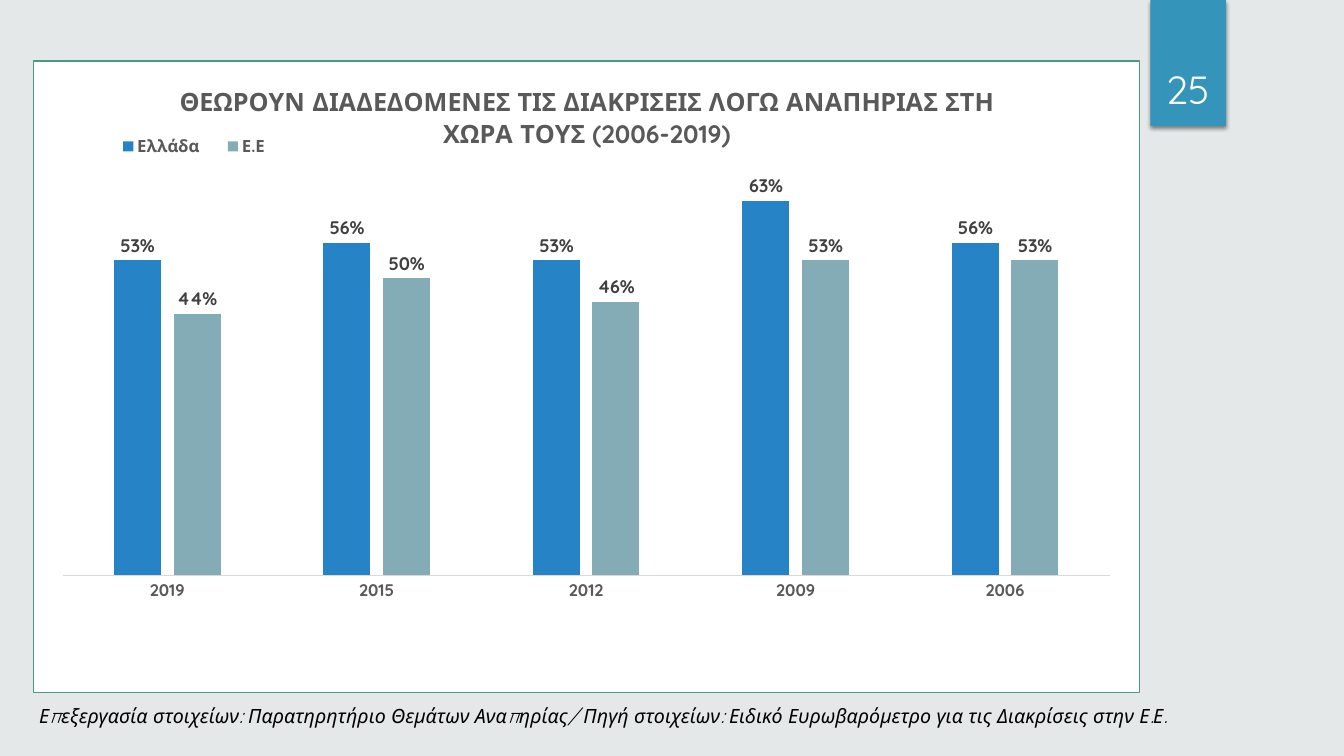
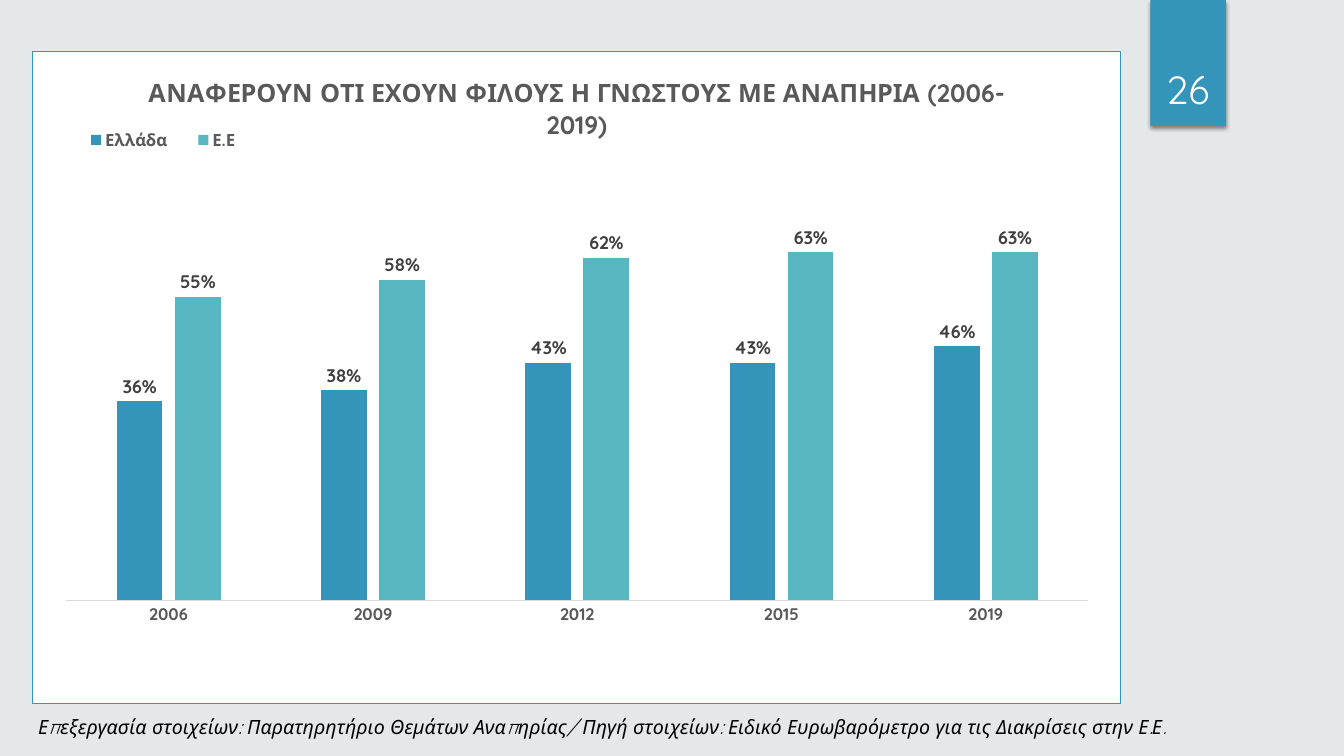
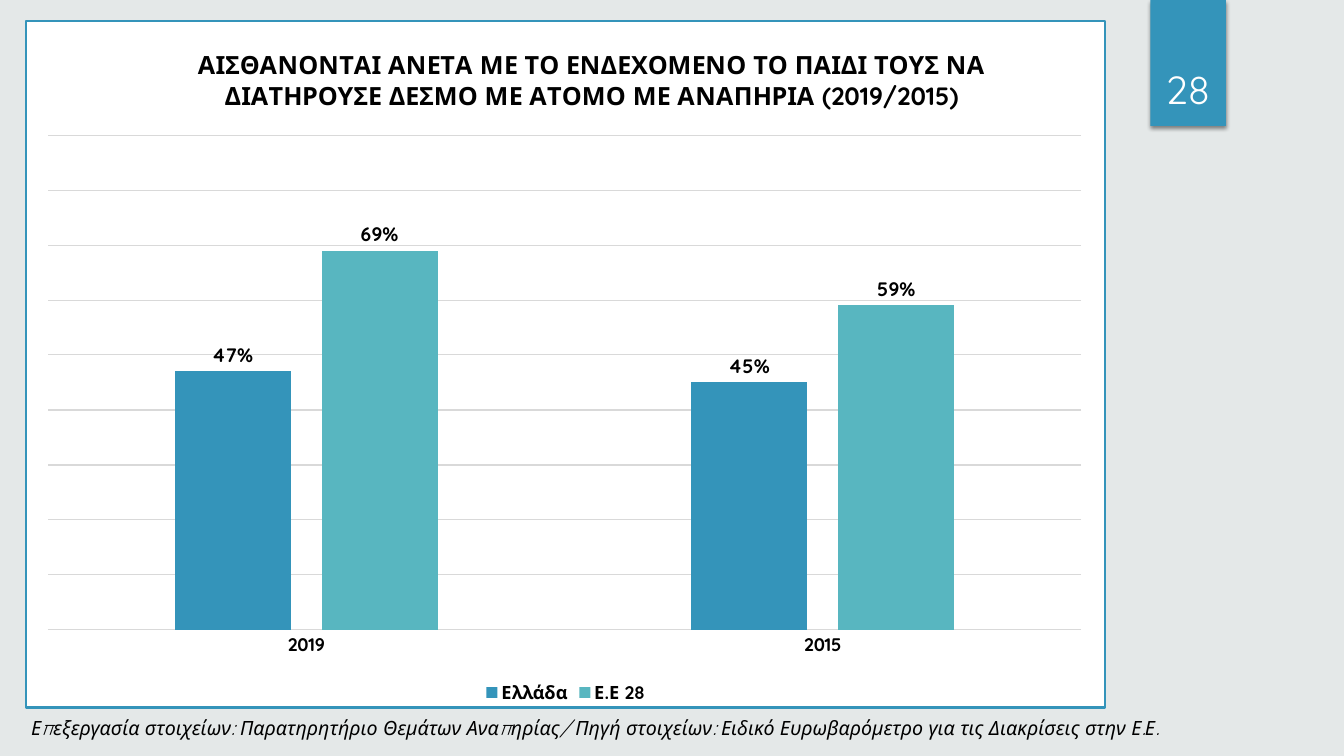
"""Build three slides of bar charts about attitudes to disability."""
from lxml import etree
from pptx import Presentation
from pptx.chart import data as cd
from pptx.dml.color import RGBColor
from pptx.enum import chart as ce, shapes, text
from pptx.oxml import ns, parse_xml
from pptx.util import Inches, Pt

PALE = RGBColor(0xE4, 0xE8, 0xE8)
WHITE = RGBColor(0xFF, 0xFF, 0xFF)
BLACK = RGBColor(0, 0, 0)
GREY = RGBColor(0x59, 0x59, 0x59)
DARK = RGBColor(0x40, 0x40, 0x40)
RULE = RGBColor(0xD9, 0xD9, 0xD9)
BLUE = RGBColor(0x34, 0x94, 0xBA)
TEAL = RGBColor(0x58, 0xB6, 0xC0)
ROYAL = RGBColor(0x26, 0x83, 0xC6)
SLATE = RGBColor(0x84, 0xAC, 0xB6)
GREEN = RGBColor(0x4A, 0x9B, 0x83)
FACE = "Quicksand"
SOURCE = ("Επεξεργασία στοιχείων: Παρατηρητήριο Θεμάτων Αναπηρίας/ "
          "Πηγή στοιχείων: Ειδικό Ευρωβαρόμετρο για τις Διακρίσεις στην Ε.Ε.")

SMALL = dict(text=GREY, label=DARK, size=12, mark=13, line=0.75, top=0.8, grid=False, head=None)
LARGE = dict(text=BLACK, label=BLACK, size=13, mark=14, line=1.5, top=0.9, grid=True,
             head=(0.155, 0.03))

SLIDES = [
    dict(SMALL, page=25, box=(0.33, 0.6, 10.98, 6.28), note=(0.29, 6.93),
         title="ΘΕΩΡΟΥΝ ΔΙΑΔΕΔΟΜΕΝΕΣ ΤΙΣ ΔΙΑΚΡΙΣΕΙΣ ΛΟΓΩ ΑΝΑΠΗΡΙΑΣ ΣΤΗ ΧΩΡΑ ΤΟΥΣ (2006-2019)",
         years=["2019", "2015", "2012", "2009", "2006"],
         bars=[("Ελλάδα", (0.53, 0.56, 0.53, 0.63, 0.56), ROYAL),
               ("Ε.Ε", (0.44, 0.5, 0.46, 0.53, 0.53), SLATE)],
         edge=GREEN, plot=(0.026, 0.062, 0.947, 0.752), key=(0.06, 0.1, 0.17, 0.07)),
    dict(SMALL, page=26, box=(0.32, 0.51, 10.8, 6.47), note=(0.28, 7.04),
         title="ΑΝΑΦΕΡΟΥΝ ΟΤΙ ΕΧΟΥΝ ΦΙΛΟΥΣ Η ΓΝΩΣΤΟΥΣ ΜΕ ΑΝΑΠΗΡΙΑ (2006-2019)",
         years=["2006", "2009", "2012", "2015", "2019"],
         bars=[("Ελλάδα", (0.36, 0.38, 0.43, 0.43, 0.46), BLUE),
               ("Ε.Ε", (0.55, 0.58, 0.62, 0.63, 0.63), TEAL)],
         edge=BLUE, plot=(0.031, 0.164, 0.939, 0.678), key=(0.03, 0.1, 0.18, 0.07)),
    dict(LARGE, page=28, box=(0.25, 0.2, 10.72, 6.83), note=(0.21, 7.05),
         title="ΑΙΣΘΑΝΟΝΤΑΙ ΑΝΕΤΑ ΜΕ ΤΟ ΕΝΔΕΧΟΜΕΝΟ ΤΟ ΠΑΙΔΙ ΤΟΥΣ ΝΑ ΔΙΑΤΗΡΟΥΣΕ ΔΕΣΜΟ "
               "ΜΕ ΑΤΟΜΟ ΜΕ ΑΝΑΠΗΡΙΑ (2019/2015)",
         years=["2019", "2015"],
         bars=[("Ελλάδα", (0.47, 0.45), BLUE), ("Ε.Ε 28", (0.69, 0.59), TEAL)],
         edge=BLUE, plot=(0.02, 0.166, 0.958, 0.721), key=None),
]


def put(item, **vals):
    """Set each given attribute on the item."""
    for name, val in vals.items():
        setattr(item, name, val)


def style(font, size, color, **more):
    """Give a font the deck's face, a size and a colour."""
    put(font, name=FACE, size=Pt(size), **more)
    font.color.rgb = color


def stroke(line, color, width=0.75):
    """Draw a line in one colour."""
    line.color.rgb = color
    line.width = Pt(width)


def write(slide, words, box, size, color, frame, align=None, **more):
    """Add a text box of one paragraph."""
    area = slide.shapes.add_textbox(*map(Inches, box)).text_frame
    put(area, **frame)
    para = area.paragraphs[0]
    para.alignment = align
    run = para.add_run()
    run.text = words
    style(run.font, size, color, **more)


def badge(slide, page):
    """Add the tab with its shadow and page number."""
    tab = slide.shapes.add_shape(shapes.MSO_SHAPE.RECTANGLE,
                                 *map(Inches, (11.41, 0, 0.75, 1.25)))
    tab.fill.solid()
    tab.fill.fore_color.rgb = BLUE
    tab.line.fill.background()
    tab.shadow.inherit = False
    glow = tab._element.spPr.find(ns.qn("a:effectLst"))
    cast = etree.SubElement(glow, ns.qn("a:outerShdw"), blurRad=str(Pt(3)),
                            dist=str(Pt(2)), dir="5400000", rotWithShape="0")
    tint = etree.SubElement(cast, ns.qn("a:srgbClr"), val=str(BLACK))
    etree.SubElement(tint, ns.qn("a:alpha"), val="45000")
    write(slide, str(page), (11.32, 0.32, 0.92, 0.84), 28, WHITE,
          dict(word_wrap=True, vertical_anchor=text.MSO_ANCHOR.BOTTOM),
          text.PP_ALIGN.CENTER)


def place(part, index, spots, inner=False):
    """Fix a chart part at fractions of the chart area."""
    old = part.find(ns.qn("c:layout"))
    if old is not None:
        part.remove(old)
    layout = part.makeelement(ns.qn("c:layout"))
    part.insert(index, layout)
    manual = etree.SubElement(layout, ns.qn("c:manualLayout"))
    rows = [("layoutTarget", "inner")] if inner else []
    rows += [("xMode", "edge"), ("yMode", "edge")]
    rows += zip("xywh", map(str, spots))
    for name, val in rows:
        etree.SubElement(manual, ns.qn("c:" + name), val=val)


def panel(chart, color, width):
    """Give the chart a white ground and a border."""
    look = parse_xml(
        f'<c:spPr {ns.nsdecls("c", "a")}><a:solidFill><a:srgbClr val="{WHITE}"/></a:solidFill>'
        f'<a:ln w="{Pt(width)}"><a:solidFill><a:srgbClr val="{color}"/></a:solidFill></a:ln>'
        '</c:spPr>')
    chart._chartSpace.find(ns.qn("c:chart")).addnext(look)


def axes(chart, info):
    """Format both axes."""
    none = ce.XL_TICK_MARK.NONE
    base, scale = chart.category_axis, chart.value_axis
    put(base, major_tick_mark=none, minor_tick_mark=none)
    style(base.tick_labels.font, info["size"], info["text"], bold=True)
    stroke(base.format.line, RULE)
    put(scale, minimum_scale=0, maximum_scale=info["top"], major_unit=0.1,
        major_tick_mark=none, minor_tick_mark=none, visible=info["grid"],
        has_major_gridlines=info["grid"])
    if info["grid"]:
        scale.tick_label_position = ce.XL_TICK_LABEL_POSITION.NONE
        scale.format.line.fill.background()
        stroke(scale.major_gridlines.format.line, RULE)


def columns(chart, info):
    """Colour and label the columns."""
    plot = chart.plots[0]
    put(plot, gap_width=219, overlap=-27, vary_by_categories=False)
    for series, (_, _, color) in zip(plot.series, info["bars"]):
        series.format.fill.solid()
        series.format.fill.fore_color.rgb = color
        labels = series.data_labels
        put(labels, show_value=True, number_format="0%", number_format_is_linked=False,
            position=ce.XL_LABEL_POSITION.OUTSIDE_END)
        style(labels.font, info["mark"], info["label"], bold=True)


def heading(chart, info):
    """Add the chart title."""
    chart.has_title = True
    run = chart.chart_title.text_frame.paragraphs[0].add_run()
    run.text = info["title"]
    style(run.font, 18, info["text"], bold=True)
    if info["head"]:
        place(chart.chart_title._element, 1, info["head"])


def legend(chart, info):
    """Add the legend."""
    chart.has_legend = True
    put(chart.legend, position=ce.XL_LEGEND_POSITION.BOTTOM, include_in_layout=False)
    style(chart.legend.font, info["size"], info["text"], bold=True)
    if info["key"]:
        place(chart.legend._element, 1, info["key"])


def graph(slide, info):
    """Add the column chart."""
    data = cd.CategoryChartData(number_format="0%")
    data.categories = info["years"]
    for name, vals, _ in info["bars"]:
        data.add_series(name, vals)
    chart = slide.shapes.add_chart(ce.XL_CHART_TYPE.COLUMN_CLUSTERED,
                                   *map(Inches, info["box"]), data).chart
    style(chart.font, 10, BLACK)
    panel(chart, info["edge"], info["line"])
    for step in (heading, legend, axes, columns):
        step(chart, info)
    place(chart._chartSpace.chart.plotArea, 0, info["plot"], True)


def main():
    """Build and save the deck."""
    deck = Presentation()
    put(deck, slide_width=Inches(13.33), slide_height=Inches(7.5))
    ground = deck.slide_master.background.fill
    ground.solid()
    ground.fore_color.rgb = PALE
    for info in SLIDES:
        slide = deck.slides.add_slide(deck.slide_layouts[6])
        badge(slide, info["page"])
        graph(slide, info)
        write(slide, SOURCE, (*info["note"], 12.26, 0.34), 14, BLACK,
              dict(word_wrap=False, auto_size=text.MSO_AUTO_SIZE.SHAPE_TO_FIT_TEXT),
              italic=True)
    deck.save("out.pptx")


if __name__ == "__main__":
    main()
